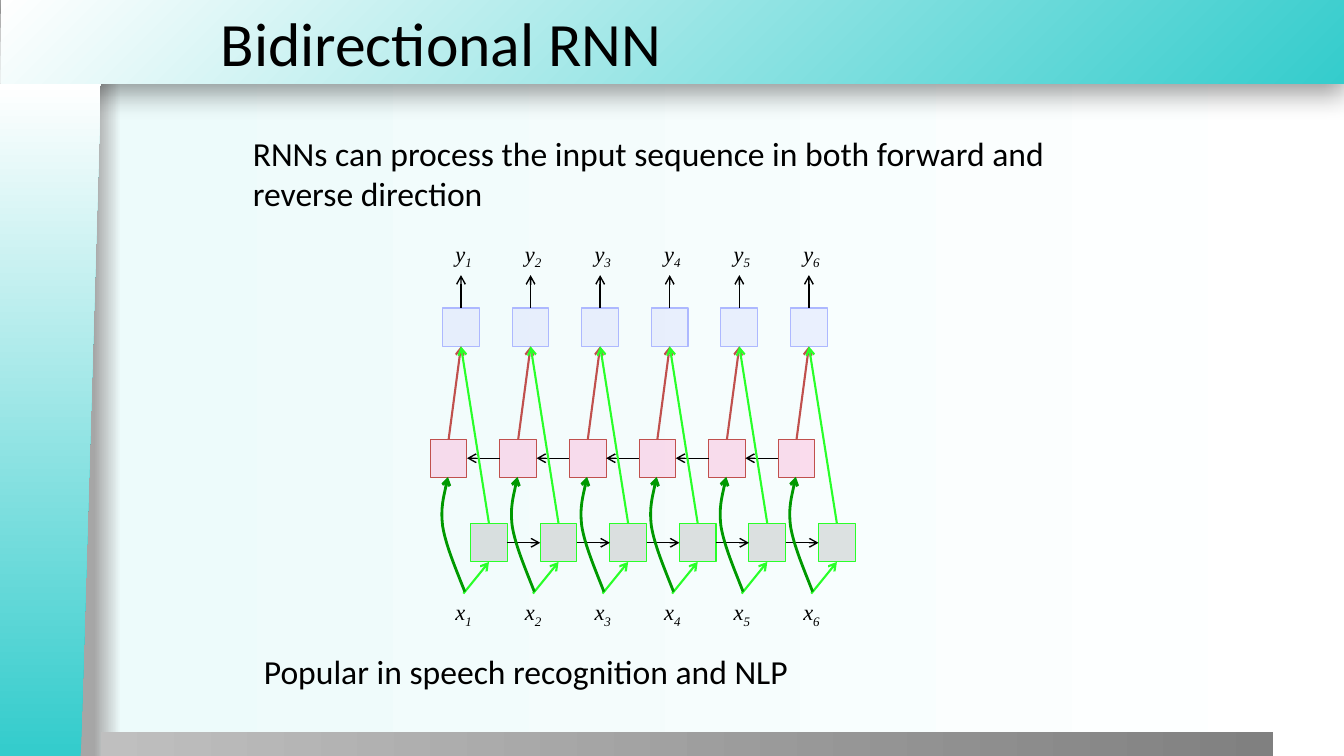
from lxml import etree
from pptx import Presentation
from pptx.dml.color import RGBColor
from pptx.enum.shapes import MSO_CONNECTOR, MSO_SHAPE
from pptx.enum.text import MSO_ANCHOR, MSO_AUTO_SIZE, PP_ALIGN
from pptx.oxml.ns import qn
from pptx.util import Pt

RECT, MANUAL_INPUT = MSO_SHAPE.RECTANGLE, MSO_SHAPE.FLOWCHART_MANUAL_INPUT
STRAIGHT = MSO_CONNECTOR.STRAIGHT
MIDDLE, CENTER = MSO_ANCHOR.MIDDLE, PP_ALIGN.CENTER
FIT_SHAPE = MSO_AUTO_SIZE.SHAPE_TO_FIT_TEXT
TOP, LEFT, BOTTOM, RIGHT = range(4)

# Content: text, place, size, frame settings
TEXTS = [
    ("Bidirectional RNN", (150.5, 0, 810, 59.8), 44, {"vertical_anchor": MIDDLE}),
    ("RNNs can process the input sequence in both forward and reverse direction",
     (173.5, 91.4, 648.7, 77), 24, {"margin_right": Pt(36)}),
    ("Popular in speech recognition and NLP", (181.4, 461.5, 648.7, 42.5), 24, {}),
]
STEPS = 6
STEP = 49.7
BOX_W, BOX_H = 26.2, 27.4

# Layers of the network: left of the first box, top, fill, line
LAYERS = {
    "forward": (336.2, 374, "A6A6A6", "29FF29"),
    "output": (316.2, 220, "CED4FF", "ADB8FF"),
    "backward": (307.4, 313.6, "FF99CC", "C0504D"),
}
LABELS = {"x": 424, "y": 167.8}
LABEL_LEFT, LABEL_W, LABEL_H = 316.4, 29.5, 28.8
INPUT_X, INPUT_Y, RESULT_Y = 331, 424, 196.5
GREEN, DARK_GREEN, RED, BLACK = "29FF29", "009900", "C0504D", "000000"
INPUT_CURVE = [(332, 422.6), (325.5, 406), (318.4, 389.5), (316.2, 375.8),
               (314.5, 362.2), (320, 340.6), (320, 340.6)]

# Backdrop: gradient stops as (percent, colour)
BACKGROUND = [(7, "A6A6A6"), (9, "EDFBFB"), (100, "FFFFFF")]
HEADER = [(0, "34CCCC"), (100, "FFFFFF")]
SIDEBAR = [(1, "34CCCC"), (100, "FFFFFF")]
FOOTER = [(0, "BFBFBF"), (100, "808080")]

prs = Presentation()
prs.slide_width, prs.slide_height = Pt(960), Pt(540)
slide = prs.slides.add_slide(prs.slide_layouts[6])
shapes = slide.shapes


def color(hex_code):
    return RGBColor.from_string(hex_code)


def child(parent, tag, **attrs):
    return etree.SubElement(parent, qn(tag), {k: str(v) for k, v in attrs.items()})


def add_alpha(parent, percent):
    child(next(parent.iter(qn("a:srgbClr"))), "a:alpha", val=percent * 1000)


def gradient(fill, owner, stops, from_corner=False):
    fill.gradient()
    grad = next(owner.iter(qn("a:gradFill")))
    for old in list(grad):
        grad.remove(old)
    stop_list = child(grad, "a:gsLst")
    for percent, hex_code in stops:
        child(child(stop_list, "a:gs", pos=percent * 1000), "a:srgbClr", val=hex_code)
    if from_corner:
        child(child(grad, "a:path", path="circle"), "a:fillToRect", l=100000, t=100000)
        child(grad, "a:tileRect", r=-100000, b=-100000)
    else:
        child(grad, "a:lin", ang=0, scaled=0)


def add_panel(kind, place, stops, from_corner=False):
    panel = shapes.add_shape(kind, *map(Pt, place))
    panel.shadow.inherit = False
    panel.line.fill.background()
    gradient(panel.fill, panel._element.spPr, stops, from_corner)
    return panel


def add_text(runs, place, size, font, frame_format):
    frame = shapes.add_textbox(*map(Pt, place)).text_frame
    frame.word_wrap = True
    for name, value in frame_format.items():
        setattr(frame, name, value)
    paragraph = frame.paragraphs[0]
    for text in runs:
        run = paragraph.add_run()
        run.text = text
        run.font.name, run.font.size = font, Pt(size)
        run.font.color.rgb = color(BLACK)
    return paragraph


def style_line(shape, hex_code, width, arrow=True):
    shape.line.color.rgb = color(hex_code)
    shape.line.width = Pt(width)
    if arrow:
        child(shape.line._get_or_add_ln(), "a:tailEnd", type="arrow")


def add_arrow(start, end, hex_code, width):
    """Each end is a point (x, y) or a joined side (box, side)."""
    joined = [not isinstance(e[0], (int, float)) for e in (start, end)]
    points = [(0, 0) if j else e for j, e in zip(joined, (start, end))]
    arrow = shapes.add_connector(STRAIGHT, *(Pt(v) for p in points for v in p))
    if joined[0]:
        arrow.begin_connect(*start)
    if joined[1]:
        arrow.end_connect(*end)
    style_line(arrow, hex_code, width)
    child(arrow._element.spPr, "a:effectLst")


def add_curve(points):
    (x, y), *rest = [(Pt(px), Pt(py)) for px, py in points]
    builder = shapes.build_freeform(x, y)
    builder.add_line_segments(rest, close=False)
    curve = builder.convert_to_shape()
    curve.shadow.inherit = False
    curve.fill.background()
    style_line(curve, DARK_GREEN, 2)
    # Turn every three segments into one Bezier segment
    segments = list(curve._element.iter(qn("a:lnTo")))
    outline = segments[0].getparent()
    for i in range(0, len(segments), 3):
        bezier = child(outline, "a:cubicBezTo")
        for segment in segments[i:i + 3]:
            bezier.append(segment[0])
            outline.remove(segment)


# Backdrop
gradient(slide.background.fill, slide._element, BACKGROUND)
header = add_panel(RECT, (0.5, 0, 960, 59.8), HEADER, from_corner=True)
shadow = child(header._element.spPr.find(qn("a:effectLst")), "a:outerShdw",
               blurRad=Pt(20), dist=Pt(6), dir=90 * 60000, algn="t", rotWithShape=0)
child(shadow, "a:srgbClr", val=BLACK)
add_alpha(shadow, 40)
sidebar = add_panel(MANUAL_INPUT, (-204.5, 264.2, 481, 72), SIDEBAR)
sidebar.rotation = 270
sidebar._element.spPr.find(qn("a:xfrm")).set("flipV", "1")
add_panel(RECT, (72, 522.7, 837.4, 18), FOOTER)

# Title and statements
for text, place, size, frame_format in TEXTS:
    add_text([text], place, size, "Calibri", frame_format)

# Boxes of the three layers
boxes = {}
for layer, (left, top, fill, line) in LAYERS.items():
    boxes[layer] = []
    for i in range(STEPS):
        box = shapes.add_shape(RECT, *map(Pt, (left + i * STEP, top, BOX_W, BOX_H)))
        box.shadow.inherit = False
        box.fill.solid()
        box.fill.fore_color.rgb = color(fill)
        add_alpha(box._element.spPr, 33)
        style_line(box, line, 0.75, arrow=False)
        boxes[layer].append(box)
forward, output, backward = boxes["forward"], boxes["output"], boxes["backward"]

# Input and output labels
for letter, top in LABELS.items():
    for i in range(STEPS):
        label = add_text([letter, str(i + 1)],
                         (LABEL_LEFT + i * STEP, top, LABEL_W, LABEL_H), 16,
                         "Times New Roman", {"word_wrap": False, "auto_size": FIT_SHAPE})
        label.alignment = CENTER
        for run in label.runs:
            run.font.italic = True
        label.runs[1]._r.get_or_add_rPr().set("baseline", "-25000")

# Arrows between time steps
for i in range(STEPS - 1):
    add_arrow((forward[i], RIGHT), (forward[i + 1], LEFT), BLACK, 1)
    add_arrow((backward[i + 1], LEFT), (backward[i], RIGHT), BLACK, 1)

# Arrows within each time step
for i in range(STEPS):
    shift = i * STEP
    result_x = LAYERS["output"][0] + BOX_W / 2 + shift
    add_arrow((INPUT_X + shift, INPUT_Y), (forward[i], BOTTOM), GREEN, 1.5)
    add_arrow((output[i], TOP), (result_x, RESULT_Y), BLACK, 1)
    add_arrow((backward[i], TOP), (output[i], BOTTOM), RED, 1.5)
    add_curve([(x + shift, y) for x, y in INPUT_CURVE])
    add_arrow((forward[i], TOP), (output[i], BOTTOM), GREEN, 1.5)

prs.save("out.pptx")
